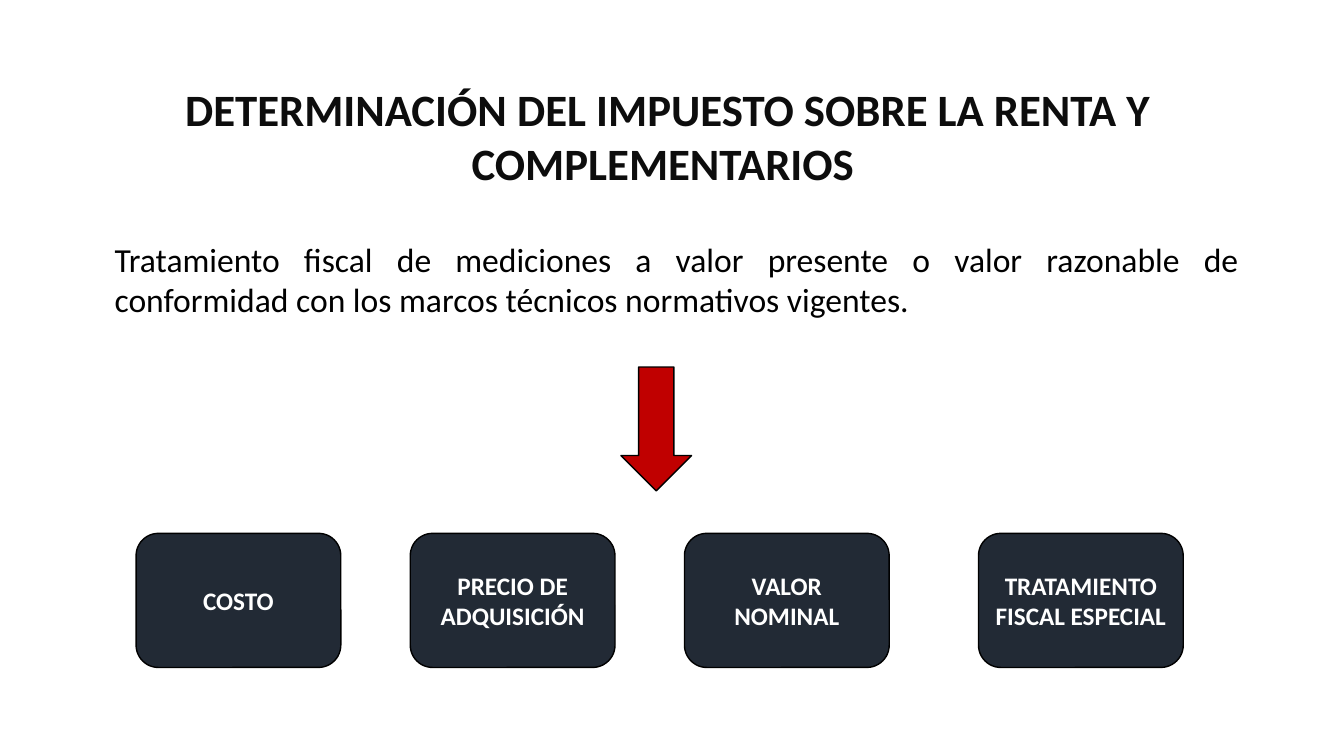
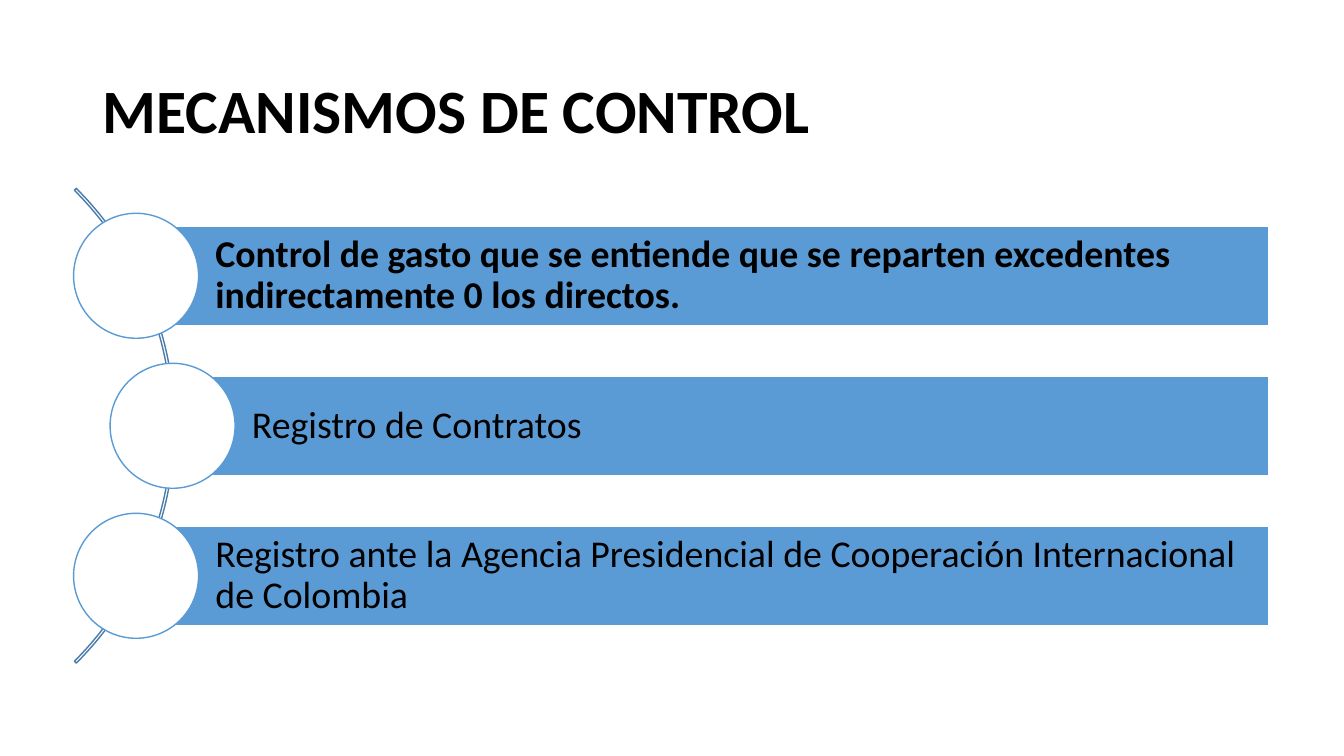
from dataclasses import dataclass
from typing import Any

import pptx
import pptx.dml.color
import pptx.enum.shapes
import pptx.enum.text
import pptx.util

Cm = pptx.util.Cm
Pt = pptx.util.Pt
RGB = pptx.dml.color.RGBColor
SHAPE = pptx.enum.shapes.MSO_SHAPE
ALIGN = pptx.enum.text.PP_ALIGN
ANCHOR = pptx.enum.text.MSO_ANCHOR
AUTO_SIZE = pptx.enum.text.MSO_AUTO_SIZE


@dataclass(frozen=True)
class Theme:
    font: str = "Calibri"
    black: RGB = RGB(0x00, 0x00, 0x00)
    white: RGB = RGB(0xFF, 0xFF, 0xFF)
    ink: RGB = RGB(0x0D, 0x0D, 0x0D)
    red: RGB = RGB(0xC0, 0x00, 0x00)
    navy: RGB = RGB(0x22, 0x2A, 0x35)
    blue: RGB = RGB(0x5B, 0x9B, 0xD5)
    arc_blue: RGB = RGB(0x49, 0x7C, 0xAB)
    long_title: Pt = Pt(32)
    short_title: Pt = Pt(44)
    body: Pt = Pt(24)
    basis: Pt = Pt(18)
    control: Pt = Pt(27)
    outline: Pt = Pt(1)


THEME = Theme()


@dataclass(frozen=True)
class Box:
    """Position and size in centimetres."""
    left: float
    top: float
    width: float
    height: float

    def lengths(self) -> tuple[Cm, Cm, Cm, Cm]:
        return Cm(self.left), Cm(self.top), Cm(self.width), Cm(self.height)


@dataclass(frozen=True)
class TextStyle:
    size: Pt
    color: RGB = THEME.black
    bold: bool = False
    align: ALIGN = ALIGN.LEFT
    anchor: ANCHOR = ANCHOR.MIDDLE
    spacing: float = 1.0


@dataclass(frozen=True)
class Basis:
    label: str
    extra_gap: float = 0


@dataclass(frozen=True)
class Control:
    label: str
    indent: float = 0
    bold: bool = False


def apply(target: Any, values: dict[str, Any]) -> None:
    for name, value in values.items():
        setattr(target, name, value)


def write(shape: Any, text: str, style: TextStyle) -> None:
    frame = shape.text_frame
    apply(frame, {"text": text, "word_wrap": True, "auto_size": AUTO_SIZE.NONE,
                  "vertical_anchor": style.anchor})
    paragraph = frame.paragraphs[0]
    apply(paragraph, {"alignment": style.align, "line_spacing": style.spacing})
    run_font = paragraph.runs[0].font
    apply(run_font, {"name": THEME.font, "size": style.size, "bold": style.bold})
    run_font.color.rgb = style.color


def add_title(slide: Any, text: str, box: Box, style: TextStyle) -> None:
    title = slide.shapes.title
    apply(title, dict(zip(("left", "top", "width", "height"), box.lengths())))
    write(title, text, style)


def add_figure(slide: Any, kind: SHAPE, box: Box, fill: RGB | None, line: RGB) -> Any:
    figure = slide.shapes.add_shape(kind, *box.lengths())
    figure.shadow.inherit = False
    if fill is None:
        figure.fill.background()
    else:
        figure.fill.solid()
        figure.fill.fore_color.rgb = fill
    figure.line.color.rgb = line
    figure.line.width = THEME.outline
    return figure


def build_tax_slide(slide: Any) -> None:
    add_title(slide, "DETERMINACIÓN DEL IMPUESTO SOBRE LA RENTA Y COMPLEMENTARIOS ",
              Box(3.78, 1.93, 26.11, 3),
              TextStyle(THEME.long_title, THEME.ink, True, ALIGN.CENTER, ANCHOR.TOP))

    # Statement and the arrow below it
    statement = slide.shapes.add_textbox(*Box(2.64, 5.89, 28.83, 2.31).lengths())
    write(statement, "Tratamiento fiscal de mediciones a valor presente o valor razonable de "
                     "conformidad con los marcos técnicos normativos vigentes.",
          TextStyle(THEME.body, align=ALIGN.JUSTIFY, anchor=ANCHOR.TOP))
    add_figure(slide, SHAPE.DOWN_ARROW, Box(15.65, 9.25, 1.78, 3.12), THEME.red, THEME.black)

    # Measurement bases, the special treatment set slightly apart
    bases = (Basis("COSTO"), Basis("PRECIO DE ADQUISICIÓN"), Basis("VALOR NOMINAL"),
             Basis("TRATAMIENTO FISCAL ESPECIAL", extra_gap=0.5))
    first_left, pitch = 3.43, 6.91
    style = TextStyle(THEME.basis, THEME.white, True, ALIGN.CENTER)
    for index, basis in enumerate(bases):
        box = Box(first_left + index * pitch + basis.extra_gap, 13.44, 5.16, 3.38)
        card = add_figure(slide, SHAPE.FLOWCHART_ALTERNATE_PROCESS, box,
                          THEME.navy, THEME.black)
        write(card, basis.label, style)


def build_control_slide(slide: Any) -> None:
    add_title(slide, "MECANISMOS DE CONTROL", Box(2.34, 1.02, 29.21, 3.68),
              TextStyle(THEME.short_title, bold=True, spacing=0.9))

    # Arc behind the controls
    middle, arc_size = 10.73, 16.92
    arc = add_figure(slide, SHAPE.BLOCK_ARC,
                     Box(-12.52, middle - arc_size / 2, arc_size, arc_size),
                     None, THEME.arc_blue)
    for index, value in enumerate((189, 27, 0.004)):
        arc.adjustments[index] = value

    # Bars, each with a circle centred on its left edge
    controls = (
        Control("Control de gasto que se entiende que se reparten excedentes "
                "indirectamente 0 los directos.", bold=True),
        Control("Registro de Contratos", indent=0.92),
        Control("Registro ante la Agencia Presidencial de Cooperación Internacional "
                "de Colombia"),
    )
    base_left, right, pitch, bar_height, diameter = 3.43, 31.98, 3.78, 2.51, 3.15
    margins = {"margin_left": Cm(2), "margin_right": Cm(0.18),
               "margin_top": Cm(0.18), "margin_bottom": Cm(0.18)}
    for index, control in enumerate(controls):
        left = base_left + control.indent
        center = middle + (index - 1) * pitch
        bar = add_figure(slide, SHAPE.RECTANGLE,
                         Box(left, center - bar_height / 2, right - left, bar_height),
                         THEME.blue, THEME.white)
        write(bar, control.label, TextStyle(THEME.control, bold=control.bold, spacing=0.9))
        apply(bar.text_frame, margins)
        add_figure(slide, SHAPE.OVAL,
                   Box(left - diameter / 2, center - diameter / 2, diameter, diameter),
                   THEME.white, THEME.blue)


def main() -> None:
    deck = pptx.Presentation()
    apply(deck, {"slide_width": Cm(33.87), "slide_height": Cm(19.05)})
    title_only = deck.slide_layouts.get_by_name("Title Only")
    for build in (build_tax_slide, build_control_slide):
        build(deck.slides.add_slide(title_only))
    deck.save("out.pptx")


if __name__ == "__main__":
    main()
